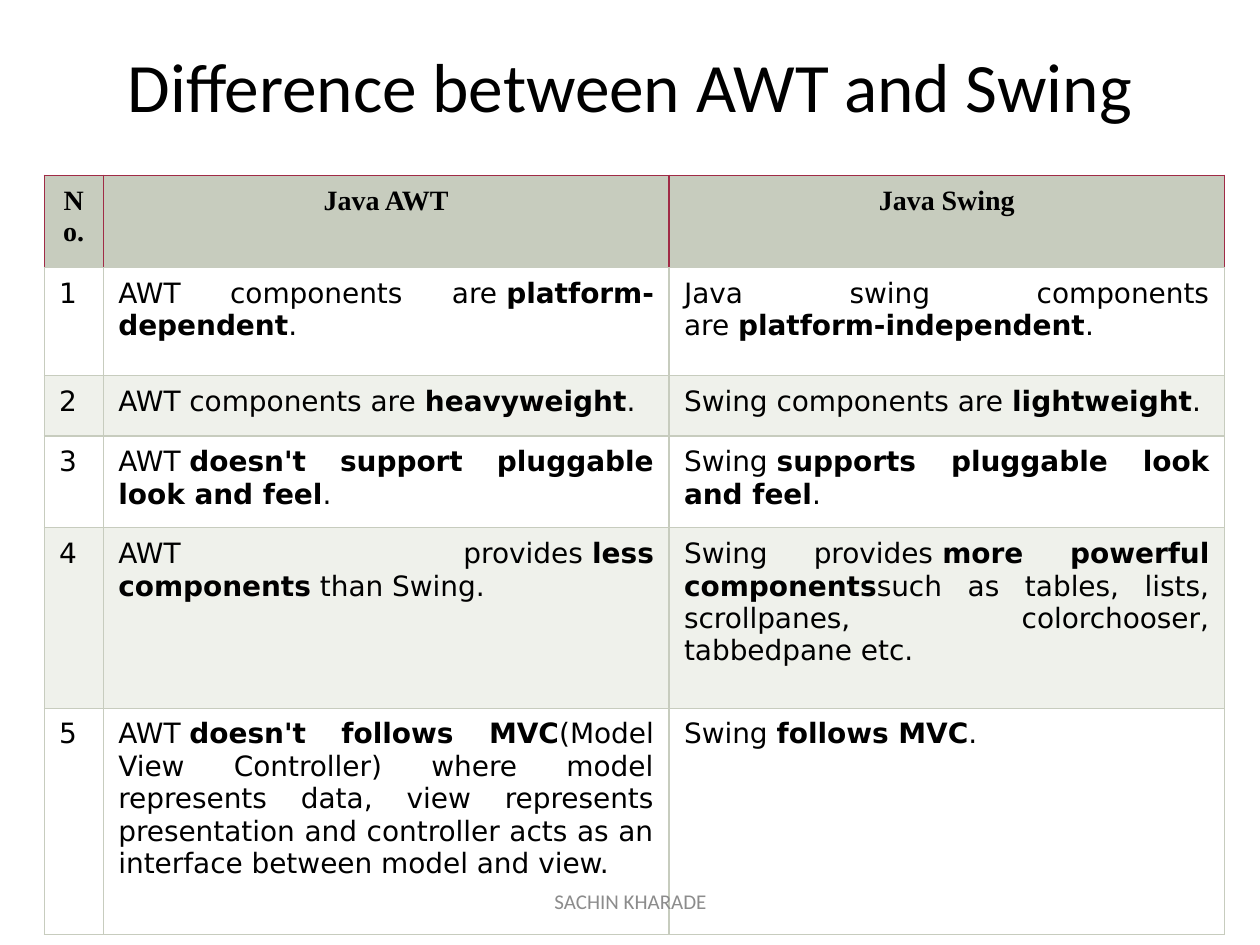
from dataclasses import dataclass

from lxml import etree
from pptx import Presentation
from pptx.dml.color import RGBColor
from pptx.enum import text
from pptx.oxml import ns
from pptx.util import Inches, Pt


@dataclass(frozen=True)
class Theme:
    ink: str = "000000"
    muted: str = "8C8C8C"
    header: str = "C7CCBE"
    header_line: str = "A02B46"
    bands: tuple = ("FFFFFF", "EFF1EB")
    heading_font: str = "Calibri"
    header_font: str = "Times New Roman"
    body_font: str = "DejaVu Sans"
    title_size: float = 39.6
    table_size: float = 16
    footer_size: float = 12
    line: float = 0.75


THEME = Theme()
NBSP = chr(160)

# ** switches bold on and off; ~ stands for a no-break space.
HEADINGS = ("No.", "Java AWT", "Java Swing")
COMPARISON = [
    ("AWT components are~**platform-dependent**.",
     "Java swing components are~**platform-independent**."),
    ("AWT components are~**heavyweight**.",
     "Swing components are~**lightweight**."),
    ("AWT~**doesn't support pluggable look and feel**.",
     "Swing~**supports pluggable look and feel**."),
    ("AWT provides~**less components**~than Swing.",
     "Swing provides~**more powerful components**such as tables, lists, "
     "scrollpanes, colorchooser, tabbedpane etc."),
    ("AWT~**doesn't follows MVC**(Model View Controller) where model "
     "represents data, view represents presentation and controller acts as "
     "an interface between model and view.",
     "Swing~**follows MVC**."),
]
COLUMN_WIDTHS = (0.47, 4.49, 4.41)
ROW_HEIGHTS = (0.73, 0.86, 0.48, 0.73, 1.43, 1.8)


def write(frame, marked, *, size, font, color=THEME.ink, bold=False,
          align=text.PP_ALIGN.CENTER, anchor=text.MSO_ANCHOR.MIDDLE):
    """Fill a frame with one paragraph; ** toggles bold against the default."""
    frame.word_wrap = True
    frame.vertical_anchor = anchor
    paragraph = frame.paragraphs[0]
    paragraph.alignment = align
    for index, part in enumerate(marked.replace("~", NBSP).split("**")):
        if not part:
            continue
        run = paragraph.add_run()
        run.text = part
        run.font.size = Pt(size)
        run.font.name = font
        run.font.bold = bold != bool(index % 2)
        run.font.color.rgb = RGBColor.from_string(color)


def set_borders(cell, sides, color):
    properties = cell._tc.get_or_add_tcPr()
    for position, side in enumerate(sides):
        line = etree.Element(ns.qn(f"a:ln{side}"), w=str(Pt(THEME.line)))
        fill = etree.SubElement(line, ns.qn("a:solidFill"))
        etree.SubElement(fill, ns.qn("a:srgbClr"), val=color)
        properties.insert(position, line)


def style_cell(cell, fill):
    cell.margin_left = cell.margin_right = Inches(0.12)
    cell.margin_top = cell.margin_bottom = Inches(0.08)
    cell.fill.solid()
    cell.fill.fore_color.rgb = RGBColor.from_string(fill)


def add_title(slide, box, title):
    holder = slide.shapes.title
    holder.left, holder.top, holder.width, holder.height = box
    write(holder.text_frame, title, size=THEME.title_size,
          font=THEME.heading_font)


def add_comparison(slide, box):
    rows = [HEADINGS] + [(str(number), *pair)
                         for number, pair in enumerate(COMPARISON, 1)]
    table = slide.shapes.add_table(len(rows), len(HEADINGS), *box).table
    for column, width in zip(table.columns, COLUMN_WIDTHS):
        column.width = Inches(width)
    for row, height in zip(table.rows, ROW_HEIGHTS):
        row.height = Inches(height)

    for r, entries in enumerate(rows):
        for c, entry in enumerate(entries):
            cell = table.cell(r, c)
            is_header = r == 0
            style_cell(cell, THEME.header if is_header
                       else THEME.bands[(r - 1) % 2])
            if is_header:
                set_borders(cell, "B", THEME.header)
                set_borders(cell, "LRT", THEME.header_line)
            else:
                set_borders(cell, "LRTB", THEME.header)
            write(cell.text_frame, entry, size=THEME.table_size,
                  font=THEME.header_font if is_header else THEME.body_font,
                  bold=is_header,
                  align=text.PP_ALIGN.CENTER if is_header
                  else text.PP_ALIGN.JUSTIFY,
                  anchor=None)
            cell.vertical_anchor = text.MSO_ANCHOR.TOP


def add_footer(slide, box, author):
    footer = slide.shapes.add_textbox(*box)
    write(footer.text_frame, author, size=THEME.footer_size,
          font=THEME.heading_font, color=THEME.muted)


def main():
    deck = Presentation()
    deck.slide_width, deck.slide_height = Inches(10), Inches(7.5)
    slide = deck.slides.add_slide(deck.slide_layouts[5])
    add_title(slide, (Inches(0.5), Inches(0.05), Inches(9), Inches(1.25)),
              "Difference between AWT and Swing")
    add_comparison(slide, (Inches(0.35), Inches(1.39),
                           Inches(9.37), Inches(6.03)))
    add_footer(slide, (Inches(3.42), Inches(6.95), Inches(3.17), Inches(0.4)),
               "SACHIN KHARADE")
    deck.save("out.pptx")


if __name__ == "__main__":
    main()
